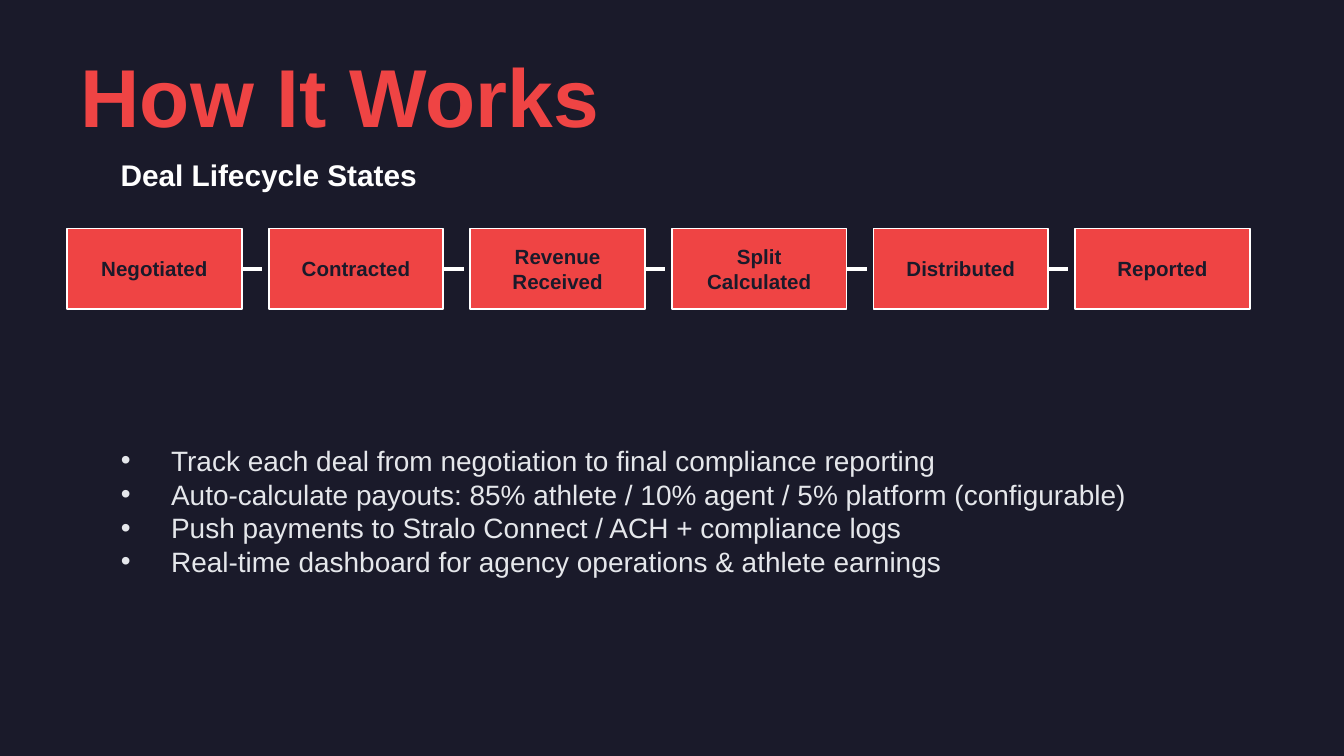
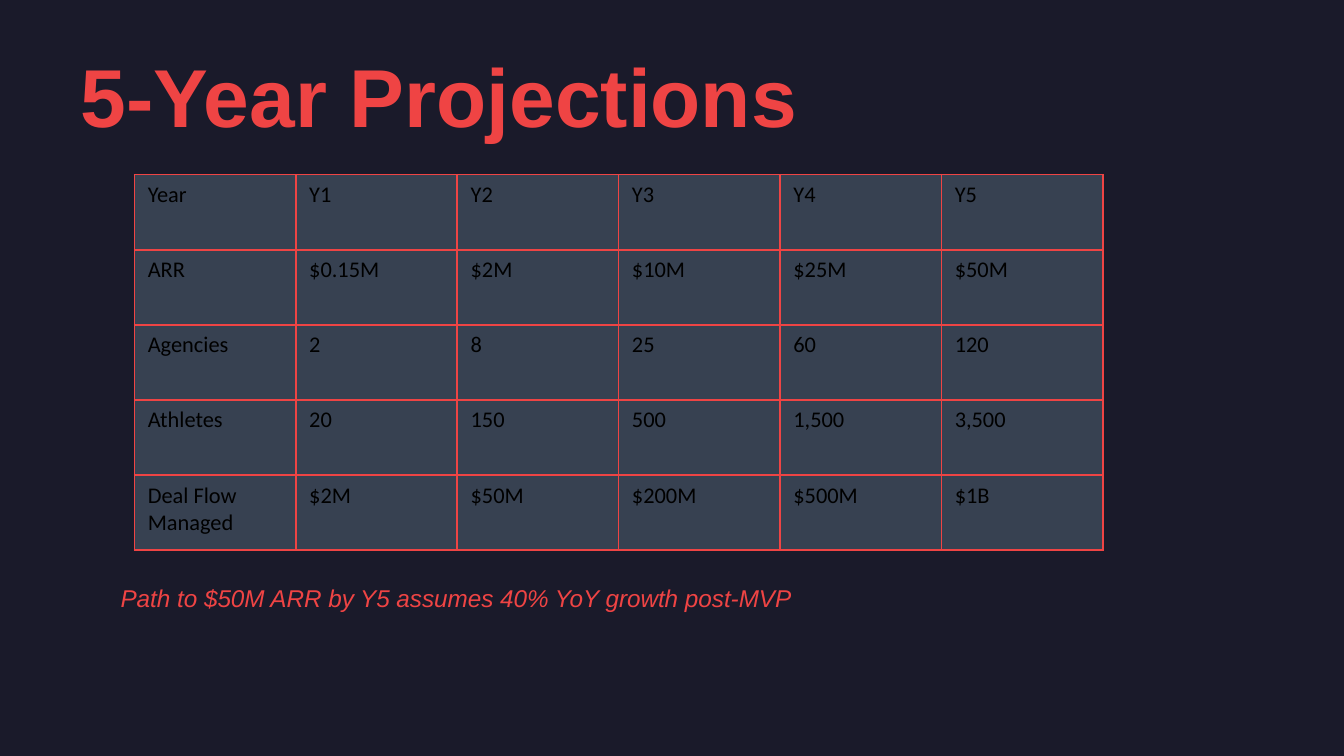
from lxml import etree
from pptx import Presentation
from pptx.dml.color import RGBColor
from pptx.enum.shapes import MSO_CONNECTOR, MSO_SHAPE
from pptx.enum.text import MSO_ANCHOR, MSO_AUTO_SIZE, PP_ALIGN
from pptx.oxml.ns import qn
from pptx.util import Cm, Pt

RECT = MSO_SHAPE.RECTANGLE
LINE = MSO_CONNECTOR.STRAIGHT
LEFT, MID = PP_ALIGN.LEFT, PP_ALIGN.CENTER
CENTER = MSO_ANCHOR.MIDDLE
FIXED = MSO_AUTO_SIZE.NONE
RIGHT = 3
LISTED, PLAIN = 1, 5

HUES = {
    "night": "1A1A2A",
    "red": "EF4444",
    "white": "FFFFFF",
    "pale": "E5E7EB",
    "slate": "374151",
    "black": "000000",
}


def hue(name):
    return RGBColor.from_string(HUES[name])


class Deck:
    font = "Arial"

    def __init__(self):
        self.prs = Presentation()
        self.prs.slide_width = Cm(25.4)
        self.prs.slide_height = Cm(14.29)
        back = self.prs.slide_master.background.fill
        back.solid()
        back.fore_color.rgb = hue("night")
        self.slide = None

    def start(self, title, layout):
        self.slide = self.prs.slides.add_slide(self.prs.slide_layouts[layout])
        head = self.slide.shapes.title
        self.place(head, 1.27, 1.02, 22.86, 1.52)
        self.words(head.text_frame, title, 44, "red", bold=True)

    def place(self, shape, x, y, w, h):
        shape.left, shape.top = Cm(x), Cm(y)
        shape.width, shape.height = Cm(w), Cm(h)

    def style(self, para, size, color, font=None, bold=False, italic=False):
        for run in para.runs:
            run.font.name = font or self.font
            run.font.size = Pt(size)
            run.font.bold = bold
            run.font.italic = italic
            run.font.color.rgb = hue(color)

    def words(self, frame, text, size, color, align=LEFT, **looks):
        frame.text = text
        frame.word_wrap = True
        frame.auto_size = FIXED
        frame.vertical_anchor = CENTER
        for para in frame.paragraphs:
            para.alignment = align
            self.style(para, size, color, **looks)

    def label(self, text, y, h, size, color, **looks):
        box = self.slide.shapes.add_textbox(Cm(2.03), Cm(y), Cm(21.34), Cm(h))
        self.words(box.text_frame, text, size, color, **looks)

    def bullets(self, lines, x, y, w, h):
        body = self.slide.placeholders[1]
        self.place(body, x, y, w, h)
        frame = body.text_frame
        self.words(frame, "\n".join(lines), 15, "pale")
        for para in frame.paragraphs:
            props = para._p.get_or_add_pPr()
            props.set("marL", str(Cm(0.95)))
            props.set("indent", str(-Cm(0.95)))
            etree.SubElement(props, qn("a:buChar"), char="•")
            para.space_before = Pt(0)

    def box(self, text, x, y, w, h):
        rect = self.slide.shapes.add_shape(RECT, Cm(x), Cm(y), Cm(w), Cm(h))
        rect.shadow.inherit = False
        rect.fill.solid()
        rect.fill.fore_color.rgb = hue("red")
        rect.line.color.rgb = hue("white")
        rect.line.width = Pt(1)
        self.words(rect.text_frame, text, 11, "night", MID, bold=True)
        return rect

    def join(self, rect, size):
        x = rect.left + rect.width
        y = rect.top + rect.height // 2
        line = self.slide.shapes.add_connector(LINE, x, y, x + Cm(size), y)
        line.begin_connect(rect, RIGHT)
        line.line.color.rgb = hue("white")
        line.line.width = Pt(2)
        etree.SubElement(line._element.spPr, qn("a:effectLst"))

    def edge(self, cell):
        props = cell._tc.get_or_add_tcPr()
        for spot, side in enumerate(("lnL", "lnR", "lnT", "lnB")):
            line = etree.Element(qn("a:" + side), w=str(Pt(1)))
            fill = etree.SubElement(line, qn("a:solidFill"))
            etree.SubElement(fill, qn("a:srgbClr"), val=HUES["red"])
            props.insert(spot, line)

    def table(self, rows, x, y, w, h):
        count, wide = len(rows), len(rows[0])
        grid = self.slide.shapes.add_table(
            count, wide, Cm(x), Cm(y), Cm(w * wide), Cm(h * count)).table
        grid.first_row = grid.horz_banding = False
        for col in grid.columns:
            col.width = Cm(w)
        for row, texts in zip(grid.rows, rows):
            row.height = Cm(h)
            for cell, text in zip(row.cells, texts):
                cell.text = text
                cell.fill.solid()
                cell.fill.fore_color.rgb = hue("slate")
                self.edge(cell)
                self.style(cell.text_frame.paragraphs[0], 12, "black", "Calibri")


def flow(deck):
    deck.start("How It Works", LISTED)
    deck.label("Deal Lifecycle States", 2.79, 1.02, 16, "white", bold=True)
    states = ["Negotiated", "Contracted", "Revenue\nReceived",
              "Split\nCalculated", "Distributed", "Reported"]
    rects = [deck.box(state, 1.27 + 3.81 * i, 4.32, 3.3, 1.52)
             for i, state in enumerate(states)]
    for rect in rects[:-1]:
        deck.join(rect, 0.38)
    deck.bullets([
        "Track each deal from negotiation to final compliance reporting",
        "Auto-calculate payouts: 85% athlete / 10% agent / 5% platform (configurable)",
        "Push payments to Stralo Connect / ACH + compliance logs",
        "Real-time dashboard for agency operations & athlete earnings",
    ], 2.03, 6.86, 21.34, 5.59)


def growth(deck):
    deck.start("5-Year Projections", PLAIN)
    deck.table([
        ["Year", "Y1", "Y2", "Y3", "Y4", "Y5"],
        ["ARR", "$0.15M", "$2M", "$10M", "$25M", "$50M"],
        ["Agencies", "2", "8", "25", "60", "120"],
        ["Athletes", "20", "150", "500", "1,500", "3,500"],
        ["Deal Flow Managed", "$2M", "$50M", "$200M", "$500M", "$1B"],
    ], 2.54, 3.3, 3.05, 1.42)
    deck.label("Path to $50M ARR by Y5 assumes 40% YoY growth post-MVP",
               10.92, 0.76, 13, "red", italic=True)


def main():
    deck = Deck()
    flow(deck)
    growth(deck)
    deck.prs.save("out.pptx")


if __name__ == "__main__":
    main()
